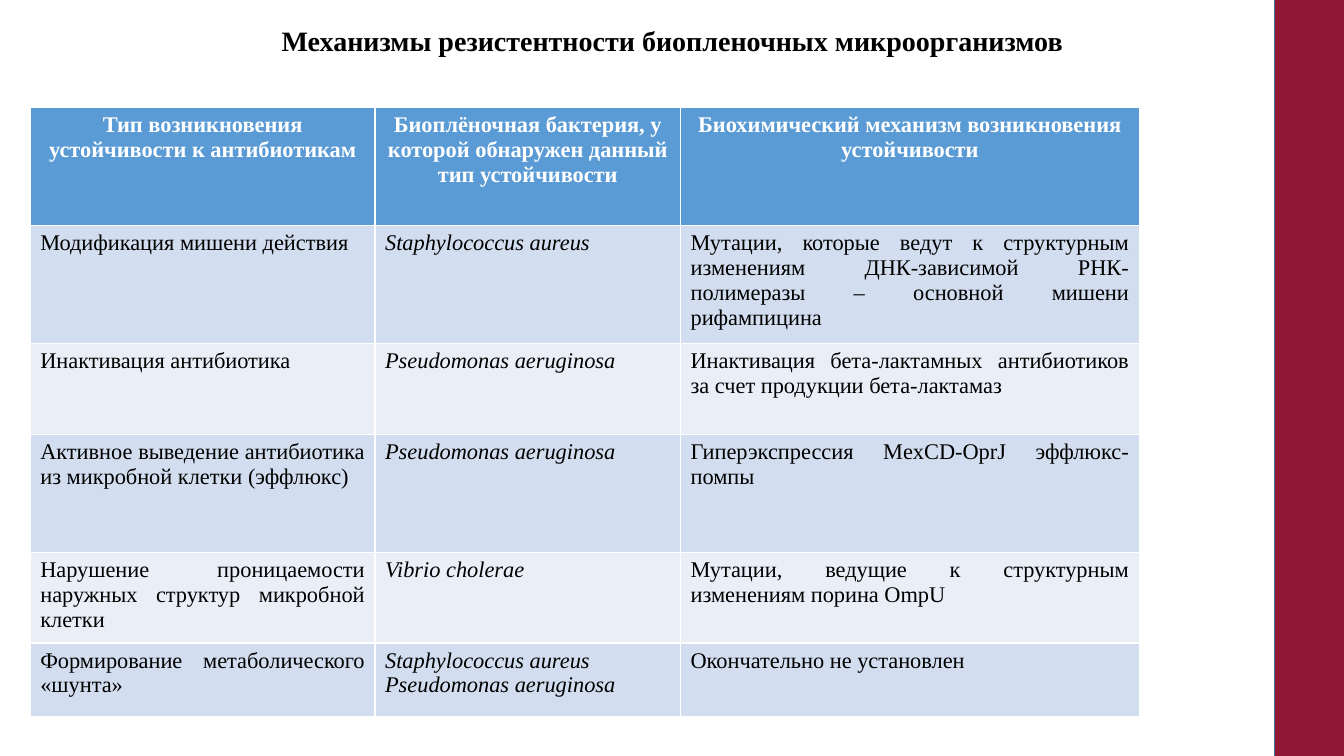
from pptx import Presentation
from pptx.dml.color import RGBColor
from pptx.enum.shapes import MSO_SHAPE
from pptx.enum.text import MSO_ANCHOR, PP_ALIGN
from pptx.util import Inches, Pt

RECTANGLE = MSO_SHAPE.RECTANGLE
MIDDLE = MSO_ANCHOR.MIDDLE
LEFT, CENTER, JUSTIFY = PP_ALIGN.LEFT, PP_ALIGN.CENTER, PP_ALIGN.JUSTIFY

BLACK = RGBColor(0x00, 0x00, 0x00)
WHITE = RGBColor(0xFF, 0xFF, 0xFF)
HEADER_BLUE = RGBColor(0x5B, 0x9B, 0xD5)
BAND_FILLS = (RGBColor(0xD2, 0xDE, 0xEF), RGBColor(0xEA, 0xEF, 0xF7))
CRIMSON = RGBColor(0x91, 0x17, 0x37)
STRIPE_EDGE = RGBColor(0x43, 0x73, 0x9E)
FONT = "Times New Roman"

TITLE = "Механизмы резистентности биопленочных микроорганизмов"
HEADERS = (
    "Тип возникновения устойчивости к антибиотикам",
    "Биоплёночная бактерия, у которой обнаружен данный тип устойчивости",
    "Биохимический механизм возникновения устойчивости",
)
MECHANISMS = (
    ("Модификация мишени действия", "Staphylococcus aureus",
     "Мутации, которые ведут к структурным изменениям ДНК-зависимой "
     "РНК-полимеразы – основной мишени рифампицина"),
    ("Инактивация антибиотика", "Pseudomonas aeruginosa",
     "Инактивация бета-лактамных антибиотиков за счет продукции бета-лактамаз"),
    ("Активное выведение антибиотика из микробной клетки (эффлюкс)",
     "Pseudomonas aeruginosa", "Гиперэкспрессия MexCD-OprJ эффлюкс-помпы"),
    ("Нарушение проницаемости наружных структур микробной клетки",
     "Vibrio cholerae", "Мутации, ведущие к структурным изменениям порина OmpU"),
    ("Формирование метаболического «шунта»",
     "Staphylococcus aureus\nPseudomonas aeruginosa", "Окончательно не установлен"),
)
COLUMN_WIDTHS = (3.42, 3.03, 4.55)
ROW_HEIGHTS = (1.17, 1.17, 0.9, 1.17, 0.9, 0.73)
BACTERIA_COLUMN = 1


def write_text(frame, text, size, color, alignment, bold=False, italic=False):
    frame.text = text
    for paragraph in frame.paragraphs:
        paragraph.alignment = alignment
        for span in paragraph.runs:
            font = span.font
            font.name, font.size = FONT, Pt(size)
            font.bold, font.italic = bold, italic
            font.color.rgb = color


def add_title(slide, left, top, width, height):
    box = slide.shapes.add_textbox(Inches(left), Inches(top), Inches(width), Inches(height))
    frame = box.text_frame
    frame.word_wrap = True
    frame.vertical_anchor = MIDDLE
    write_text(frame, TITLE, 20, BLACK, CENTER, bold=True)
    frame.paragraphs[0].line_spacing = 0.9


def add_mechanism_table(slide, left, top):
    rows = (HEADERS,) + MECHANISMS
    table = slide.shapes.add_table(
        len(rows), len(HEADERS), Inches(left), Inches(top),
        Inches(sum(COLUMN_WIDTHS)), Inches(sum(ROW_HEIGHTS))).table
    for column, width in zip(table.columns, COLUMN_WIDTHS):
        column.width = Inches(width)
    for row, height in zip(table.rows, ROW_HEIGHTS):
        row.height = Inches(height)

    for row_index, texts in enumerate(rows):
        is_header = row_index == 0
        fill = HEADER_BLUE if is_header else BAND_FILLS[(row_index - 1) % 2]
        for column_index, text in enumerate(texts):
            cell = table.cell(row_index, column_index)
            cell.fill.solid()
            cell.fill.fore_color.rgb = fill
            if is_header:
                write_text(cell.text_frame, text, 16, WHITE, CENTER, bold=True)
            else:
                is_bacteria = column_index == BACTERIA_COLUMN
                write_text(cell.text_frame, text, 16, BLACK,
                           LEFT if is_bacteria else JUSTIFY, italic=is_bacteria)


def add_side_stripe(slide, left, top, width, height):
    stripe = slide.shapes.add_shape(
        RECTANGLE, Inches(left), Inches(top), Inches(width), Inches(height))
    stripe.shadow.inherit = False
    stripe.fill.solid()
    stripe.fill.fore_color.rgb = CRIMSON
    stripe.line.color.rgb = STRIPE_EDGE
    stripe.line.width = Pt(1)


def main():
    deck = Presentation()
    deck.slide_width, deck.slide_height = Inches(13.33), Inches(7.5)
    slide = deck.slides.add_slide(deck.slide_layouts[6])
    add_title(slide, 0.3, 0, 12.74, 0.85)
    add_mechanism_table(slide, 0.3, 1.07)
    add_side_stripe(slide, 12.64, -0.08, 0.82, 7.65)
    deck.save("out.pptx")


if __name__ == "__main__":
    main()
